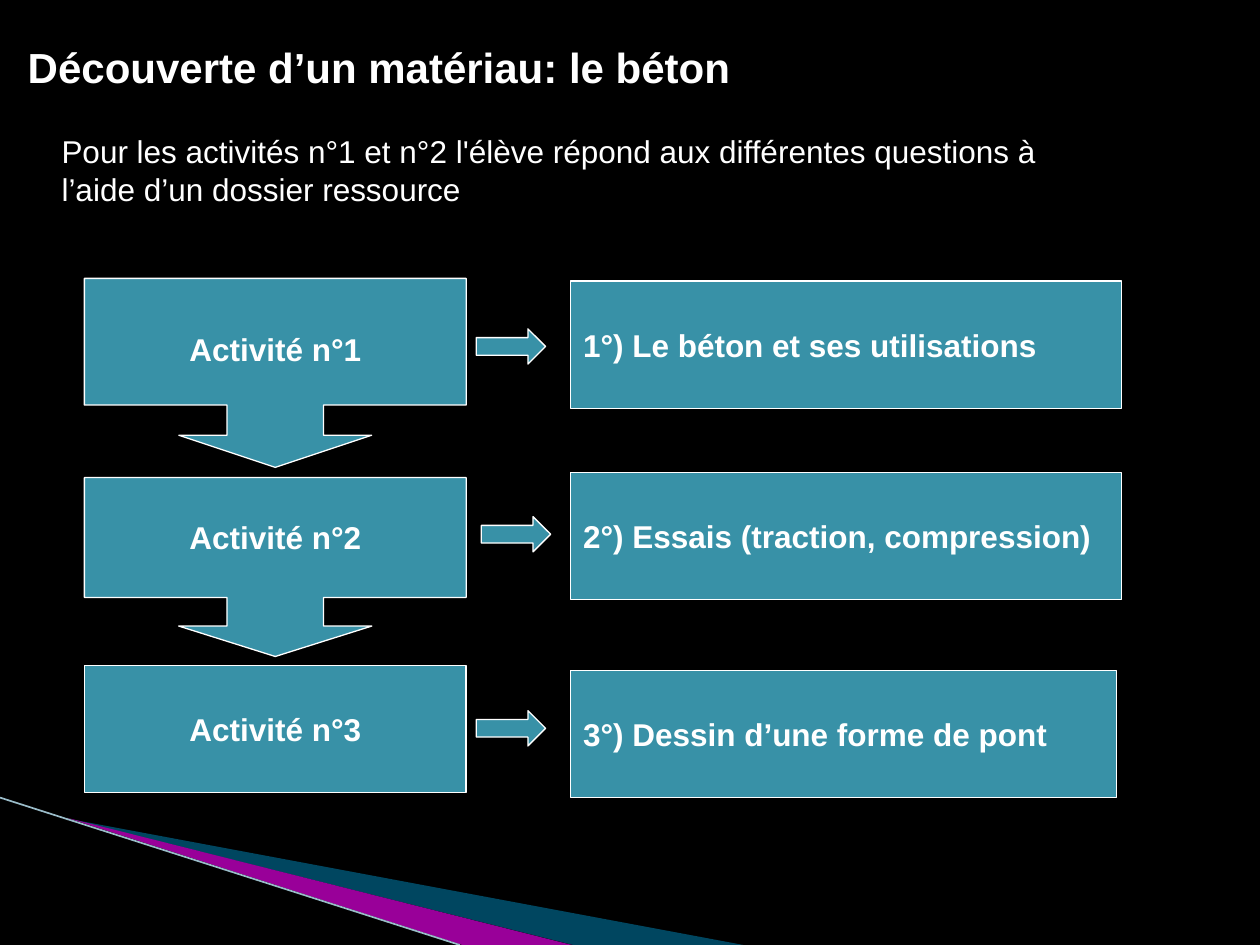
from lxml.etree import SubElement
from pptx import Presentation
from pptx.dml.color import RGBColor
from pptx.enum.shapes import MSO_CONNECTOR, MSO_SHAPE
from pptx.enum.text import MSO_ANCHOR, MSO_AUTO_SIZE, PP_ALIGN
from pptx.oxml.ns import qn
from pptx.util import Inches, Pt

BLACK = RGBColor(0x00, 0x00, 0x00)
WHITE = RGBColor(0xFF, 0xFF, 0xFF)
TEAL = RGBColor(0x38, 0x91, 0xA7)
SKY = RGBColor(0x00, 0xB0, 0xF0)
PURPLE = RGBColor(0x99, 0x00, 0x99)
PALE = RGBColor(0x9A, 0xBC, 0xC9)

WIDTH, HEIGHT = 10, 7.5
TITLE = "Découverte d’un matériau: le béton"
INTRO = ("Pour les activités n°1 et n°2 l'élève répond aux différentes questions "
         "à l’aide d’un dossier ressource")
CALLOUTS = [
    {"label": "Activité n°1", "top": 2.21, "height": 1.5, "label_top": 2.57, "shaft": 0.51},
    {"label": "Activité n°2", "top": 3.79, "height": 1.42, "label_top": 4.06, "shaft": 0.54},
]
LAST_ACTIVITY = ("Activité n°3", 5.28)
TOPICS = [
    ("1°) Le béton et ses utilisations", 2.23, 4.37),
    ("2°) Essais (traction, compression)", 3.75, 4.37),
    ("3°) Dessin d’une forme de pont", 5.32, 4.33),
]
ARROWS = [(3.78, 2.61), (3.82, 4.1), (3.78, 5.64)]
RIBBONS = [
    (SKY, 40, [(0.55, 6.5), (5.9, HEIGHT), (4.55, HEIGHT)]),
    (PURPLE, 100, [(0.53, 6.49), (4.54, HEIGHT), (3.67, HEIGHT)]),
]
ACTIVITY_LEFT, ACTIVITY_WIDTH = 0.67, 3.03
TOPIC_LEFT, BOX_HEIGHT = 4.53, 1.01
LABEL_WIDTH, LABEL_HEIGHT = 1.69, 0.4


def write(shape, text, size=18, bold=True, align=PP_ALIGN.LEFT, anchor=MSO_ANCHOR.TOP):
    """Put formatted white text in a shape."""
    frame = shape.text_frame
    frame.text = text
    frame.word_wrap = True
    frame.auto_size = MSO_AUTO_SIZE.NONE
    frame.vertical_anchor = anchor
    paragraph = frame.paragraphs[0]
    paragraph.alignment = align
    font = paragraph.runs[0].font
    font.name, font.size, font.bold = "Arial", Pt(size), bold
    font.color.rgb = WHITE


def add_text(slide, box, text, **style):
    """Add a text box."""
    write(slide.shapes.add_textbox(*map(Inches, box)), text, **style)


def add_block(slide, kind, box, adjustments=()):
    """Add a teal shape with a thin white outline."""
    shape = slide.shapes.add_shape(kind, *map(Inches, box))
    shape.shadow.inherit = False
    shape.fill.solid()
    shape.fill.fore_color.rgb = TEAL
    shape.line.color.rgb = WHITE
    shape.line.width = Pt(0.75)
    for index, value in enumerate(adjustments):
        shape.adjustments[index] = value
    return shape


def add_ribbon(slide, color, opacity, points):
    """Add a filled triangular ribbon."""
    start, *others = [(Inches(x), Inches(y)) for x, y in points]
    builder = slide.shapes.build_freeform(*start)
    builder.add_line_segments(others, close=True)
    ribbon = builder.convert_to_shape()
    ribbon.shadow.inherit = False
    ribbon.line.fill.background()
    ribbon.fill.solid()
    ribbon.fill.fore_color.rgb = color
    if opacity < 100:
        fill_color = ribbon.element.spPr.find(qn("a:solidFill"))[0]
        SubElement(fill_color, qn("a:alpha")).set("val", str(opacity * 1000))


def add_edge(slide):
    """Add the pale line along the ribbons."""
    ends = map(Inches, (0, 6.33, 3.65, HEIGHT))
    edge = slide.shapes.add_connector(MSO_CONNECTOR.STRAIGHT, *ends)
    edge.line.color.rgb = PALE
    edge.line.width = Pt(0.95)
    SubElement(edge.element.spPr, qn("a:effectLst"))


def main():
    """Build the slide and save it."""
    presentation = Presentation()
    presentation.slide_width, presentation.slide_height = Inches(WIDTH), Inches(HEIGHT)
    slide = presentation.slides.add_slide(presentation.slide_layouts[5])
    slide.background.fill.solid()
    slide.background.fill.fore_color.rgb = BLACK

    for ribbon in RIBBONS:
        add_ribbon(slide, *ribbon)
    add_edge(slide)

    title = slide.shapes.title
    title.left, title.top, title.width, title.height = map(Inches, (0.12, 0.28, 6.5, 0.5))
    write(title, TITLE, size=24)
    add_text(slide, (0.39, 1, 8.47, 0.7), INTRO, bold=False)

    label_left = ACTIVITY_LEFT + (ACTIVITY_WIDTH - LABEL_WIDTH) / 2
    for callout in CALLOUTS:
        box = (ACTIVITY_LEFT, callout["top"], ACTIVITY_WIDTH, callout["height"])
        shaft = callout["shaft"]
        add_block(slide, MSO_SHAPE.DOWN_ARROW_CALLOUT, box, (shaft, shaft, 0.17, 0.67))
        label_box = (label_left, callout["label_top"], LABEL_WIDTH, LABEL_HEIGHT)
        add_text(slide, label_box, callout["label"], align=PP_ALIGN.CENTER)

    for text, top, width in TOPICS:
        block = add_block(slide, MSO_SHAPE.RECTANGLE, (TOPIC_LEFT, top, width, BOX_HEIGHT))
        write(block, text, anchor=MSO_ANCHOR.MIDDLE)
    for left, top in ARROWS:
        add_block(slide, MSO_SHAPE.RIGHT_ARROW, (left, top, 0.55, 0.28), (0.5, 0.5))

    text, top = LAST_ACTIVITY
    block = add_block(slide, MSO_SHAPE.RECTANGLE, (ACTIVITY_LEFT, top, ACTIVITY_WIDTH, BOX_HEIGHT))
    write(block, text, align=PP_ALIGN.CENTER, anchor=MSO_ANCHOR.MIDDLE)

    presentation.save("out.pptx")


if __name__ == "__main__":
    main()
